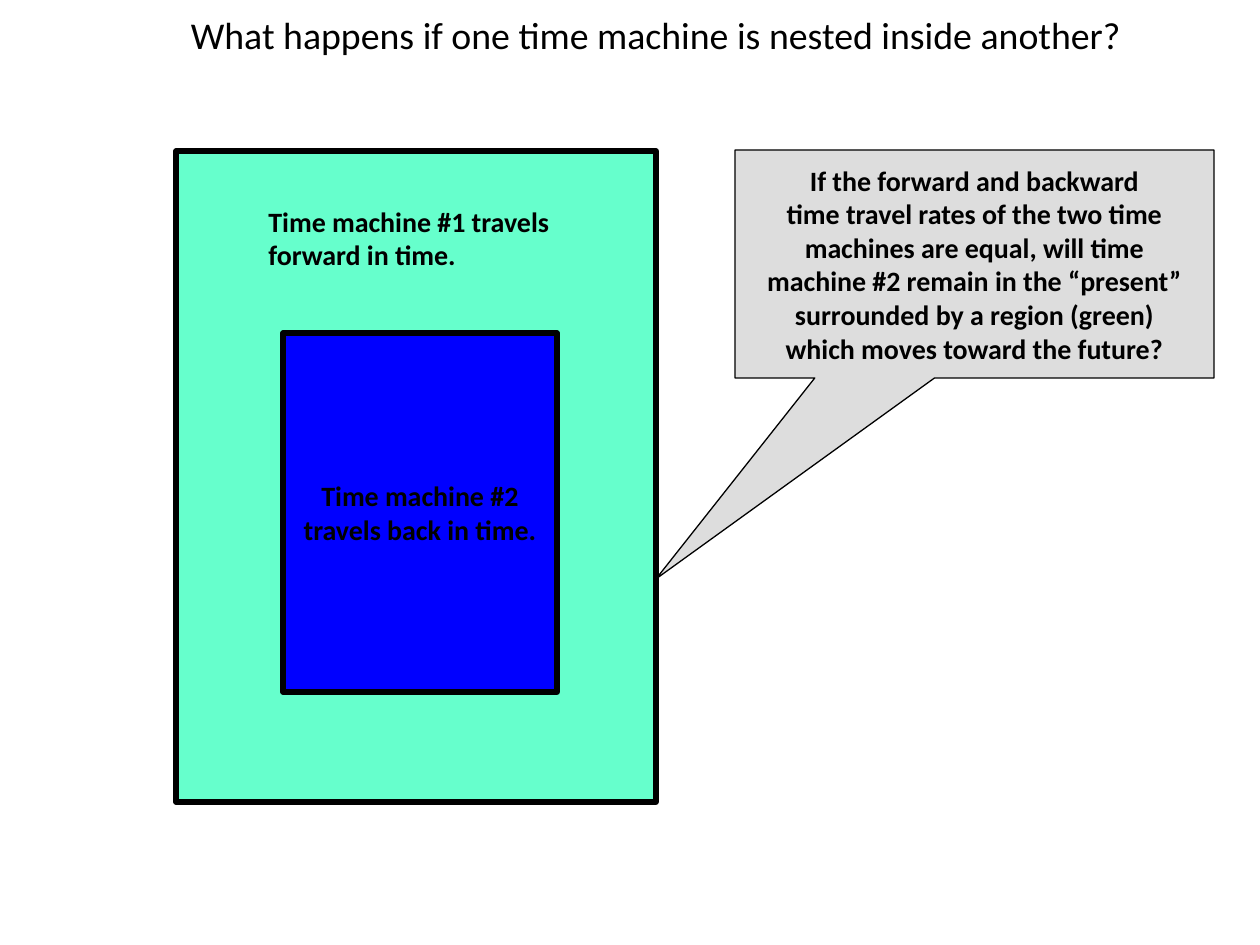
from pptx import Presentation
from pptx.dml.color import RGBColor
from pptx.enum.shapes import MSO_SHAPE
from pptx.enum.text import MSO_ANCHOR, MSO_AUTO_SIZE, PP_ALIGN
from pptx.util import Emu, Pt

PX_PER_INCH = 126
BLACK, GREEN, BLUE, GREY = "000000", "66FFCC", "0000FF", "DDDDDD"


def px(length):
    return Emu(round(length * 914400 / PX_PER_INCH))


def color(hex_value):
    return RGBColor.from_string(hex_value)


class SlideBuilder:
    """Holds the text style and the current slide."""

    label_font = {"name": "Calibri", "size": Pt(16), "bold": True}
    title_font = {"name": "Calibri", "size": Pt(21.6), "bold": False}

    def __init__(self, slide):
        self.slide = slide

    def fill_text(self, frame, lines, font, align, wrap=False):
        frame.word_wrap = wrap
        for index, line in enumerate(lines):
            paragraph = frame.paragraphs[0] if index == 0 else frame.add_paragraph()
            paragraph.alignment = align
            run = paragraph.add_run()
            run.text = line
            for attribute, value in font.items():
                setattr(run.font, attribute, value)
            run.font.color.rgb = color(BLACK)

    def title(self, text, left, top, width, height):
        title = self.slide.shapes.title
        title.left, title.top = px(left), px(top)
        title.width, title.height = px(width), px(height)
        title.text_frame.auto_size = MSO_AUTO_SIZE.NONE
        title.text_frame.vertical_anchor = MSO_ANCHOR.MIDDLE
        self.fill_text(title.text_frame, [text], self.title_font, PP_ALIGN.CENTER, wrap=True)

    def label(self, lines, left, top, width, height):
        label = self.slide.shapes.add_textbox(px(left), px(top), px(width), px(height))
        label.text_frame.auto_size = MSO_AUTO_SIZE.SHAPE_TO_FIT_TEXT
        self.fill_text(label.text_frame, lines, self.label_font, PP_ALIGN.LEFT)

    def box(self, left, top, width, height, fill, line_width=3, lines=(),
            kind=MSO_SHAPE.RECTANGLE):
        box = self.slide.shapes.add_shape(kind, px(left), px(top), px(width), px(height))
        box.shadow.inherit = False
        box.fill.solid()
        box.fill.fore_color.rgb = color(fill)
        box.line.color.rgb = color(BLACK)
        box.line.width = Pt(line_width)
        box.text_frame.vertical_anchor = MSO_ANCHOR.MIDDLE
        self.fill_text(box.text_frame, lines, self.label_font, PP_ALIGN.CENTER)
        return box

    def callout(self, lines, left, top, width, height, tip):
        callout = self.box(left, top, width, height, GREY, 0.75, lines,
                           MSO_SHAPE.RECTANGULAR_CALLOUT)
        # The tip is measured from the centre, as a share of the size
        callout.adjustments[0] = (tip[0] - left) / width - 0.5
        callout.adjustments[1] = (tip[1] - top) / height - 0.5


def main():
    deck = Presentation()
    deck.slide_width, deck.slide_height = px(1260), px(945)
    builder = SlideBuilder(deck.slides.add_slide(deck.slide_layouts[5]))

    builder.title("What happens if one time machine is nested inside another?",
                  147, 0, 1018, 68)

    # Outer time machine and its label
    builder.box(176, 151, 480, 651, GREEN)
    builder.label(["Time machine #1 travels", "forward in time."], 256, 198, 319, 81)

    # Inner time machine
    builder.box(283, 333, 274, 359, BLUE,
                lines=["Time machine #2", "travels back in time."])

    # Question pointing at the outer machine
    builder.callout(["If the forward and backward",
                     "time travel rates of the two time",
                     "machines are equal, will time",
                     "machine #2 remain in the “present”",
                     "surrounded by a region (green)",
                     "which moves toward the future?"],
                    735, 150, 479, 228, tip=(656, 579))

    deck.save("out.pptx")


if __name__ == "__main__":
    main()
